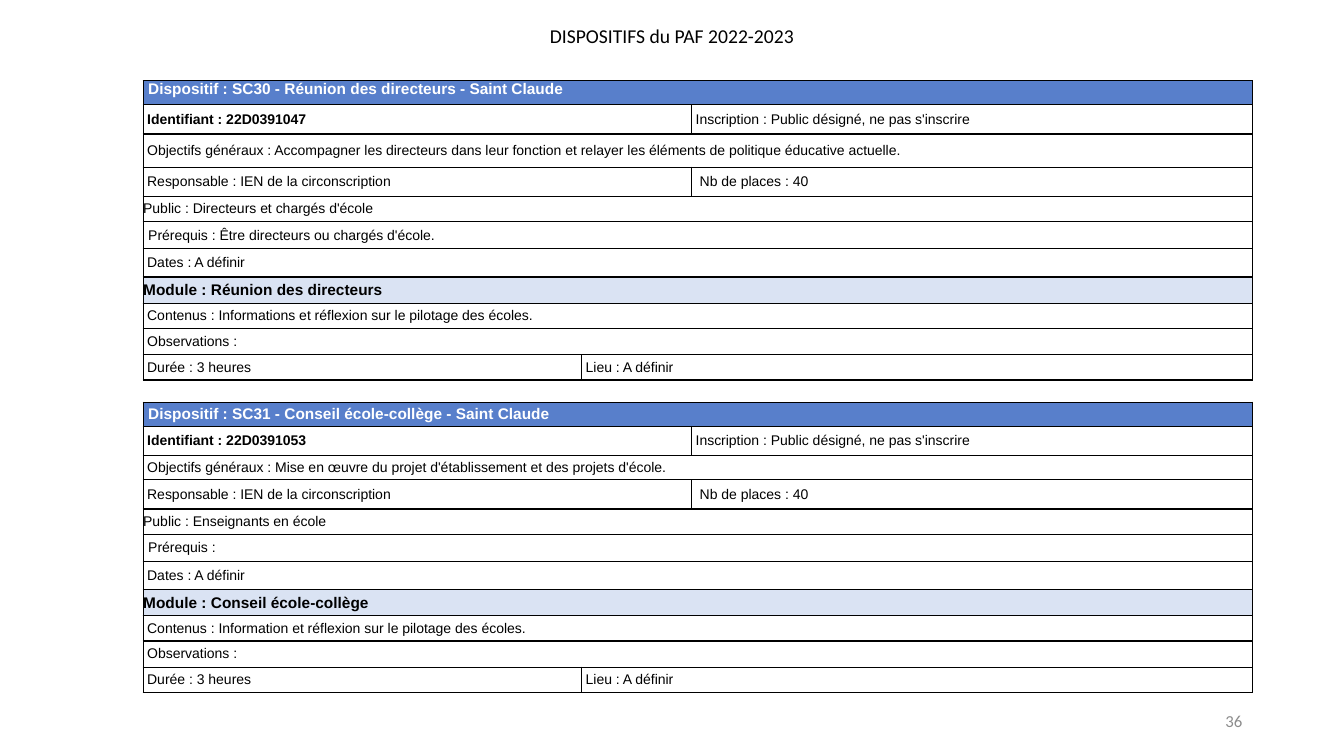
from lxml import etree
from pptx import Presentation
from pptx.dml.color import RGBColor
from pptx.enum.text import MSO_ANCHOR, PP_ALIGN
from pptx.oxml.ns import qn
from pptx.util import Inches, Pt

TOP, MIDDLE = MSO_ANCHOR.TOP, MSO_ANCHOR.MIDDLE
LEFT, CENTER, RIGHT = PP_ALIGN.LEFT, PP_ALIGN.CENTER, PP_ALIGN.RIGHT
WIDTH, HEIGHT = 13.33, 7.5
BLACK, WHITE, BLUE, PALE_BLUE, GREY = "000000", "FFFFFF", "587FCB", "DAE3F3", "8C8C8C"
INDENT, DEEP_INDENT = 0.04, 0.08
TABLE_LEFT = 1.42
DETAIL_COLUMNS, MODULE_COLUMNS = (5.44, 5.56), (4.35, 6.65)
MODULE_HEIGHTS = (0.25, 0.26, 0.25)

PROGRAMMES = (
    {
        "top": 0.8,
        "anchor": TOP,
        "goal_height": 0.33,
        "title": "SC30 - Réunion des directeurs - Saint Claude",
        "identifier": "22D0391047",
        "goal": "Accompagner les directeurs dans leur fonction et relayer "
                "les éléments de politique éducative actuelle.",
        "audience": "Directeurs et chargés d'école",
        "prerequisite": "Prérequis : Être directeurs ou chargés d'école.",
        "module": "Réunion des directeurs",
        "content": "Informations et réflexion sur le pilotage des écoles.",
    },
    {
        "top": 3.99,
        "anchor": MIDDLE,
        "goal_height": 0.24,
        "title": "SC31 - Conseil école-collège - Saint Claude",
        "identifier": "22D0391053",
        "goal": "Mise en œuvre du projet d'établissement et des projets d'école.",
        "audience": "Enseignants en école",
        "prerequisite": "Prérequis :",
        "module": "Conseil école-collège",
        "content": "Information et réflexion sur le pilotage des écoles.",
    },
)


def colour(value):
    """Turn a hex string into a colour."""
    return RGBColor.from_string(value)


def add_run(paragraph, text, size, font="Arial", ink=BLACK, bold=False):
    """Add one formatted run to a paragraph."""
    run = paragraph.add_run()
    run.text = text
    run.font.size = Pt(size)
    run.font.name = font
    run.font.bold = bold
    run.font.color.rgb = colour(ink)


def add_label(slide, box, text, size, ink, align, wrap):
    """Place a vertically centred line of text in a box."""
    shape = slide.shapes.add_textbox(*(Inches(length) for length in box))
    frame = shape.text_frame
    frame.word_wrap = wrap
    frame.vertical_anchor = MIDDLE
    paragraph = frame.paragraphs[0]
    paragraph.alignment = align
    add_run(paragraph, text, size, "Calibri", ink)


def add_borders(cell):
    """Draw a thin black line on the four sides of a cell."""
    properties = cell._tc.get_or_add_tcPr()
    for side in ("a:lnL", "a:lnR", "a:lnT", "a:lnB"):
        line = etree.SubElement(properties, qn(side), w=str(Pt(1)))
        fill = etree.SubElement(line, qn("a:solidFill"))
        etree.SubElement(fill, qn("a:srgbClr"), val=BLACK)


def fill_cell(cell, text, indent=INDENT, size=10, ink=BLACK, bold=False, anchor=MIDDLE):
    """Write one line of text in a cell."""
    cell.vertical_anchor = anchor
    cell.margin_left = Inches(indent)
    paragraph = cell.text_frame.paragraphs[0]
    paragraph.alignment = LEFT
    add_run(paragraph, text, size, ink=ink, bold=bold)


def add_grid(slide, left, top, columns, rows):
    """Add a bordered table from (height, fill, cells) rows and return its bottom."""
    heights = [height for height, _, _ in rows]
    frame = slide.shapes.add_table(
        len(rows), len(columns), Inches(left), Inches(top),
        Inches(sum(columns)), Inches(sum(heights)))
    table = frame.table
    table.first_row = table.horz_banding = False
    for column, width in zip(table.columns, columns):
        column.width = Inches(width)
    for index, (height, background, contents) in enumerate(rows):
        table.rows[index].height = Inches(height)
        cells = [table.cell(index, column) for column in range(len(columns))]
        for cell in cells:
            cell.margin_left = cell.margin_right = 0
            cell.margin_top = cell.margin_bottom = 0
            add_borders(cell)
            if background:
                cell.fill.solid()
                cell.fill.fore_color.rgb = colour(background)
            else:
                cell.fill.background()
        if len(contents) == 1:
            cells[0].merge(cells[-1])
        for cell, content in zip(cells, contents):
            fill_cell(cell, **content)
    return top + sum(heights)


def add_programme(slide, left, programme):
    """Stack the detail table and the module table of one programme."""
    heading = {"text": f"Dispositif : {programme['title']}", "size": 11, "ink": WHITE,
               "bold": True, "indent": 0.05, "anchor": programme["anchor"]}
    module = {"text": f"Module : {programme['module']}", "size": 11, "bold": True, "indent": 0}
    details = (
        (0.24, BLUE, [heading]),
        (0.29, None, [{"text": f"Identifiant : {programme['identifier']}", "bold": True},
                      {"text": "Inscription : Public désigné, ne pas s'inscrire"}]),
        (programme["goal_height"], None,
         [{"text": f"Objectifs généraux : {programme['goal']}"}]),
        (0.29, None, [{"text": "Responsable : IEN de la circonscription"},
                      {"text": "Nb de places : 40", "indent": DEEP_INDENT}]),
        (0.25, None, [{"text": f"Public : {programme['audience']}", "indent": 0}]),
        (0.27, None, [{"text": programme["prerequisite"], "indent": 0.05}]),
        (0.28, None, [{"text": "Dates : A définir"}]),
        (0.26, PALE_BLUE, [module]),
    )
    bottom = add_grid(slide, left, programme["top"], DETAIL_COLUMNS, details)
    contents = (
        [{"text": f"Contenus : {programme['content']}"}],
        [{"text": "Observations :"}],
        [{"text": "Durée : 3 heures"}, {"text": "Lieu : A définir"}],
    )
    rows = [(height, None, cells) for height, cells in zip(MODULE_HEIGHTS, contents)]
    add_grid(slide, left, bottom, MODULE_COLUMNS, rows)


def main():
    """Build the slide and save the presentation."""
    presentation = Presentation()
    presentation.slide_width = Inches(WIDTH)
    presentation.slide_height = Inches(HEIGHT)
    slide = presentation.slides.add_slide(presentation.slide_layouts[6])
    add_label(slide, (5.31, 0.18, 2.71, 0.34), "DISPOSITIFS du PAF 2022-2023",
              14, BLACK, CENTER, False)
    add_label(slide, (9.42, 6.95, 3, 0.4), "36", 12, GREY, RIGHT, True)
    for programme in PROGRAMMES:
        add_programme(slide, TABLE_LEFT, programme)
    presentation.save("out.pptx")


if __name__ == "__main__":
    main()
